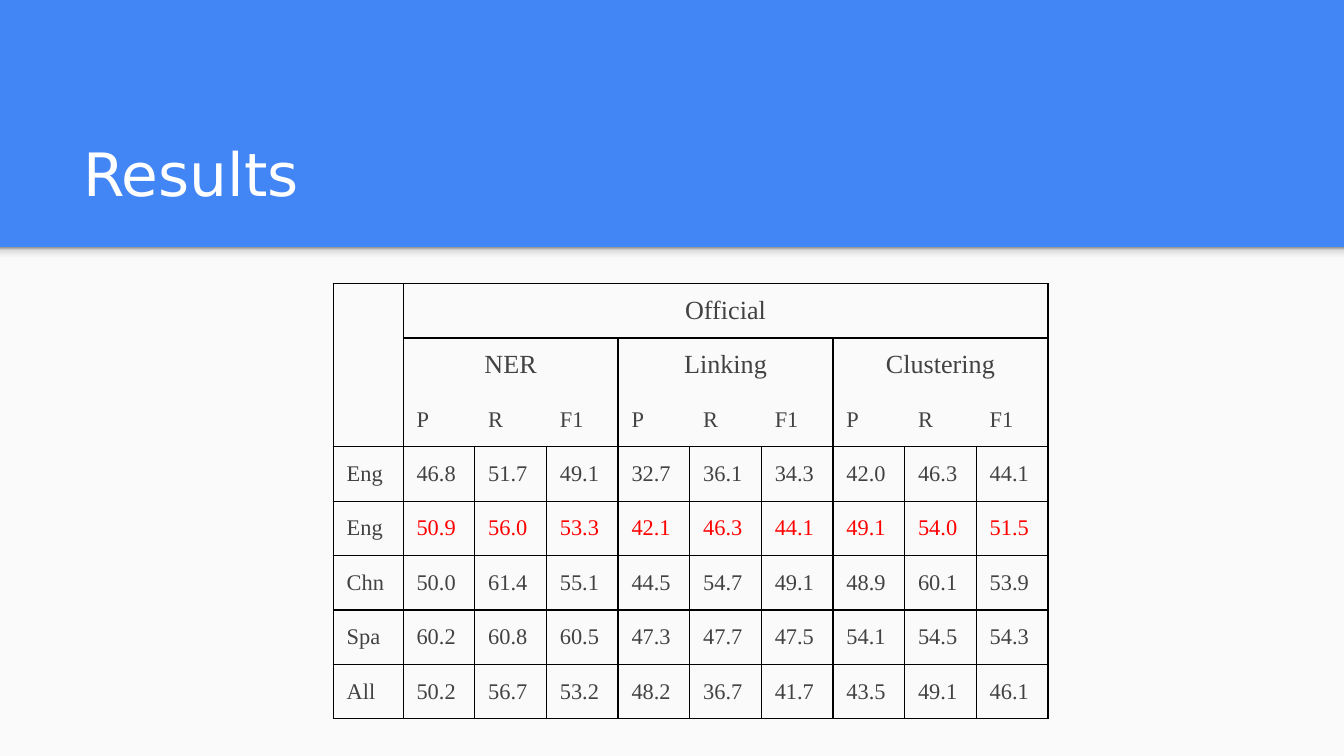
import lxml.etree
import pptx
import pptx.dml.color
import pptx.enum.shapes
import pptx.enum.text
import pptx.oxml
import pptx.oxml.ns
import pptx.util

Inches = pptx.util.Inches
RGBColor = pptx.dml.color.RGBColor
ALIGN = pptx.enum.text.PP_ALIGN
ANCHOR = pptx.enum.text.MSO_ANCHOR

SLIDE_WIDTH = 10
SLIDE_HEIGHT = SLIDE_WIDTH * 9 / 16
BODY_TOP = 1.84

BLUE = RGBColor(0x42, 0x85, 0xF4)
PAPER = RGBColor(0xFA, 0xFA, 0xFA)
WHITE = RGBColor(0xFF, 0xFF, 0xFF)
GREY = RGBColor(0x42, 0x42, 0x42)
RED = RGBColor(0xFF, 0x00, 0x00)
BLACK = RGBColor(0x00, 0x00, 0x00)
SHADE_STOPS = [
    (0, RGBColor(0xF9, 0xF9, 0xF9)),
    (36, RGBColor(0xF9, 0xF9, 0xF9)),
    (80, RGBColor(0xDE, 0xDE, 0xDE)),
    (100, RGBColor(0x99, 0x99, 0x99)),
]

TASKS = ["NER", "Linking", "Clustering"]
MEASURES = ["P", "R", "F1"]
SCORES = [
    "Eng 46.8 51.7 49.1 32.7 36.1 34.3 42.0 46.3 44.1",
    "Eng 50.9 56.0 53.3 42.1 46.3 44.1 49.1 54.0 51.5",
    "Chn 50.0 61.4 55.1 44.5 54.7 49.1 48.9 60.1 53.9",
    "Spa 60.2 60.8 60.5 47.3 47.7 47.5 54.1 54.5 54.3",
    "All 50.2 56.7 53.2 48.2 36.7 41.7 43.5 49.1 46.1",
]
HEADER_ROWS = 3
BEST_ROW = 4
ROWS = HEADER_ROWS + len(SCORES)
COLUMNS = 1 + len(TASKS) * len(MEASURES)
GROUP_EDGES = range(1, COLUMNS + 1, len(MEASURES))


def write(frame, text, font="Times New Roman", size=12, color=GREY, align=ALIGN.LEFT):
    paragraph = frame.paragraphs[0]
    paragraph.alignment = align
    run = paragraph.add_run()
    run.text = text
    run.font.name = font
    run.font.size = pptx.util.Pt(size)
    run.font.color.rgb = color


def add_panel(slide, left, top, width, height):
    panel = slide.shapes.add_shape(
        pptx.enum.shapes.MSO_SHAPE.RECTANGLE,
        Inches(left), Inches(top), Inches(width), Inches(height))
    panel.shadow.inherit = False
    panel.line.fill.background()
    panel.fill.solid()
    panel.fill.fore_color.rgb = PAPER
    return panel


def shade(panel):
    panel.fill.gradient()
    panel.fill.gradient_angle = 90
    stops = panel.fill._fill._gradFill.find(pptx.oxml.ns.qn("a:gsLst"))
    for stop in list(stops):
        stops.remove(stop)
    for percent, color in SHADE_STOPS:
        stop = lxml.etree.SubElement(stops, pptx.oxml.ns.qn("a:gs"), pos=str(percent * 1000))
        lxml.etree.SubElement(stop, pptx.oxml.ns.qn("a:srgbClr"), val=str(color))


def add_body(slide, left, top, width, height):
    add_panel(slide, left, top, width, height)
    shade(add_panel(slide, left, top, width, 0.12))


def add_title(slide, left, top, width, height):
    title = slide.shapes.add_textbox(Inches(left), Inches(top), Inches(width), Inches(height))
    frame = title.text_frame
    frame.word_wrap = True
    frame.vertical_anchor = ANCHOR.BOTTOM
    frame.margin_left = frame.margin_right = Inches(0.1)
    frame.margin_top = frame.margin_bottom = Inches(0.1)
    write(frame, "Results", font="DejaVu Sans", size=32, color=WHITE)


def has_vertical_rule(row, edge):
    if row >= HEADER_ROWS or edge in (0, 1, COLUMNS):
        return True
    return row > 0 and edge in GROUP_EDGES


def has_horizontal_rule(edge, column):
    return edge == 0 or edge >= HEADER_ROWS or (edge == 1 and column > 0)


def rule_cell(cell, row, column):
    right = column + (cell.span_width if cell.is_merge_origin else 1)
    sides = [
        ("L", has_vertical_rule(row, column)),
        ("R", has_vertical_rule(row, right)),
        ("T", has_horizontal_rule(row, column)),
        ("B", has_horizontal_rule(row + 1, column)),
    ]
    properties = cell._tc.get_or_add_tcPr()
    for index, (side, visible) in enumerate(sides):
        paint = f'<a:solidFill><a:srgbClr val="{BLACK}"/></a:solidFill>' if visible else "<a:noFill/>"
        properties.insert(index, pptx.oxml.parse_xml(
            f'<a:ln{side} {pptx.oxml.ns.nsdecls("a")} w="9525">{paint}</a:ln{side}>'))


def add_results(slide, left, top, width, height):
    table = slide.shapes.add_table(
        ROWS, COLUMNS, Inches(left), Inches(top), Inches(width), Inches(height)).table
    table.first_row = table.horz_banding = False
    label_width = 0.52
    for index, column in enumerate(table.columns):
        column.width = Inches((width - label_width) / (COLUMNS - 1) if index else label_width)
    for row in table.rows:
        row.height = Inches(height / ROWS)

    table.cell(0, 1).merge(table.cell(0, COLUMNS - 1))
    write(table.cell(0, 1).text_frame, "Official", size=14, align=ALIGN.CENTER)
    for task, start in zip(TASKS, GROUP_EDGES):
        table.cell(1, start).merge(table.cell(1, start + len(MEASURES) - 1))
        write(table.cell(1, start).text_frame, task, size=14, align=ALIGN.CENTER)
    for column, measure in enumerate(MEASURES * len(TASKS), 1):
        write(table.cell(2, column).text_frame, measure)
    for row, scores in enumerate(SCORES, HEADER_ROWS):
        for column, score in enumerate(scores.split()):
            color = RED if row == BEST_ROW and column else GREY
            write(table.cell(row, column).text_frame, score, color=color)

    for row in range(ROWS):
        for column in range(COLUMNS):
            cell = table.cell(row, column)
            cell.vertical_anchor = ANCHOR.MIDDLE
            cell.fill.background()
            rule_cell(cell, row, column)


def main():
    deck = pptx.Presentation()
    deck.slide_width = Inches(SLIDE_WIDTH)
    deck.slide_height = Inches(SLIDE_HEIGHT)
    slide = deck.slides.add_slide(deck.slide_layouts[6])
    slide.background.fill.solid()
    slide.background.fill.fore_color.rgb = BLUE
    add_body(slide, 0, BODY_TOP, SLIDE_WIDTH, SLIDE_HEIGHT - BODY_TOP)
    add_title(slide, 0.52, 0.81, 8.99, 0.84)
    add_results(slide, 2.48, 2.11, 5.32, 3.24)
    deck.save("out.pptx")


if __name__ == "__main__":
    main()
